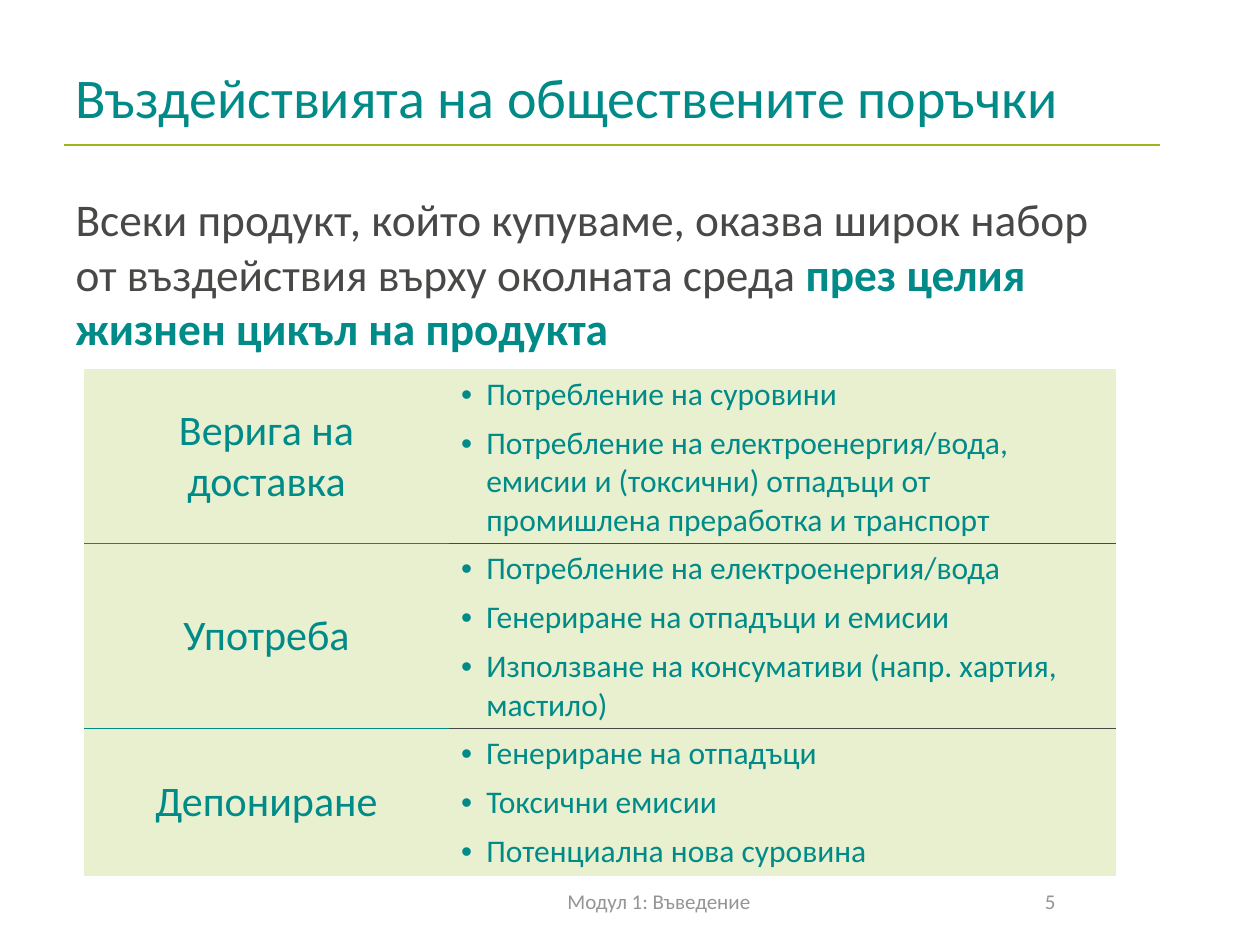
from dataclasses import dataclass

import pptx
import pptx.dml.color
import pptx.enum.shapes
import pptx.enum.text
import pptx.oxml
import pptx.oxml.ns
import pptx.util
from pptx.util import Inches, Pt

ALIGN = pptx.enum.text.PP_ALIGN
ANCHOR = pptx.enum.text.MSO_ANCHOR


@dataclass(frozen=True)
class Theme:
    font: str = "Calibri"
    teal: str = "008A88"
    dark: str = "484847"
    gray: str = "959595"
    rule: str = "9BB51B"
    cell: str = "E8F0D0"
    title_size: float = 32
    body_size: float = 25.9
    stage_size: float = 24
    impact_size: float = 18
    footer_size: float = 12


THEME = Theme()

TITLE = "Въздействията на обществените поръчки"
INTRO = "Всеки продукт, който купуваме, оказва широк набор от въздействия върху околната среда "
INTRO_EMPHASIS = "през целия жизнен цикъл на продукта"
STAGES = [
    ("Верига на доставка", 1.31, [
        "Потребление на суровини",
        "Потребление на електроенергия/вода, емисии и (токсични) отпадъци от "
        "промишлена преработка и транспорт",
    ]),
    ("Употреба", 1.39, [
        "Потребление на електроенергия/вода",
        "Генериране на отпадъци и емисии",
        "Използване на консумативи (напр. хартия, мастило)",
    ]),
    ("Депониране", 1.11, [
        "Генериране на отпадъци",
        "Токсични емисии",
        "Потенциална нова суровина",
    ]),
]
COLUMNS = [(2.89, THEME.teal), (5.3, THEME.dark)]  # width, colour of the row rule
FOOTERS = [("Модул 1: Въведение", 2.87, 4.72), ("5", 7.17, 2.33)]

NO_GRID_STYLE = "{2D5ABB26-0587-4C30-8999-92F81FD0307C}"


def rgb(color):
    return pptx.dml.color.RGBColor.from_string(color)


def parse_element(xml):
    return pptx.oxml.parse_xml(xml.replace(">", f' {pptx.oxml.ns.nsdecls("a")}>', 1))


def format_runs(paragraph, size, color):
    for run in paragraph.runs:
        run.font.name = THEME.font
        run.font.size = Pt(size)
        run.font.color.rgb = rgb(color)


def place(shape, left, top, width, height):
    shape.left, shape.top = Inches(left), Inches(top)
    shape.width, shape.height = Inches(width), Inches(height)


def set_bullet(paragraph, indent, bullet):
    """Hang the text behind the bullet, or drop the bullet when it is None."""
    properties = paragraph._p.get_or_add_pPr()
    properties.set("marL", str(Inches(indent)))
    properties.set("indent", str(-Inches(indent)))
    if bullet:
        properties.append(parse_element('<a:buFont typeface="Arial"></a:buFont>'))
        properties.append(parse_element(f'<a:buChar char="{bullet}"></a:buChar>'))
    else:
        properties.append(parse_element("<a:buNone></a:buNone>"))


def set_bottom_border(cell, color):
    cell._tc.get_or_add_tcPr().insert(0, parse_element(
        f'<a:lnB w="{Pt(1)}"><a:solidFill><a:srgbClr val="{color}"/></a:solidFill></a:lnB>'))


def add_heading(slide):
    rule = slide.shapes.add_connector(
        pptx.enum.shapes.MSO_CONNECTOR.STRAIGHT,
        Inches(0.51), Inches(1.15), Inches(9.21), Inches(1.15))
    rule.line.color.rgb = rgb(THEME.rule)
    rule.line.width = Pt(0.75)
    rule._element.spPr.append(parse_element("<a:effectLst></a:effectLst>"))

    title = slide.shapes.title
    place(title, 0.5, 0.3, 8.75, 0.93)
    frame = title.text_frame
    frame.text = TITLE
    frame.auto_size = pptx.enum.text.MSO_AUTO_SIZE.NONE
    frame.vertical_anchor = ANCHOR.MIDDLE
    frame.paragraphs[0].alignment = ALIGN.LEFT
    format_runs(frame.paragraphs[0], THEME.title_size, THEME.teal)


def add_intro(slide):
    body = slide.placeholders[1]
    place(body, 0.5, 1.47, 8.52, 1.26)
    frame = body.text_frame
    frame.text = INTRO
    frame.auto_size = pptx.enum.text.MSO_AUTO_SIZE.NONE
    paragraph = frame.paragraphs[0]
    set_bullet(paragraph, 0, None)
    paragraph.space_before = Pt(0)
    emphasis = paragraph.add_run()
    emphasis.text = INTRO_EMPHASIS
    format_runs(paragraph, THEME.body_size, THEME.dark)
    emphasis.font.bold = True
    emphasis.font.color.rgb = rgb(THEME.teal)


def fill_stage(cell, stage):
    cell.text_frame.text = stage
    paragraph = cell.text_frame.paragraphs[0]
    paragraph.alignment = ALIGN.CENTER
    format_runs(paragraph, THEME.stage_size, THEME.teal)


def fill_impacts(cell, impacts):
    cell.text_frame.text = "\n".join(impacts)
    for index, paragraph in enumerate(cell.text_frame.paragraphs):
        set_bullet(paragraph, 0.2, "•")
        paragraph.space_before = Pt(3 if index else 0)
        paragraph.space_after = Pt(3)
        format_runs(paragraph, THEME.impact_size, THEME.teal)


def add_life_cycle_table(slide):
    width = sum(column_width for column_width, _ in COLUMNS)
    height = sum(row_height for _, row_height, _ in STAGES)
    table = slide.shapes.add_table(
        len(STAGES), len(COLUMNS), Inches(0.67), Inches(2.93),
        Inches(width), Inches(height)).table
    table.first_row = table.horz_banding = False
    table._tbl.tblPr.find(pptx.oxml.ns.qn("a:tableStyleId")).text = NO_GRID_STYLE
    for column, (column_width, _) in zip(table.columns, COLUMNS):
        column.width = Inches(column_width)
    for index, (stage, row_height, impacts) in enumerate(STAGES):
        row = table.rows[index]
        row.height = Inches(row_height)
        fill_stage(row.cells[0], stage)
        fill_impacts(row.cells[1], impacts)
        for cell, (_, rule_color) in zip(row.cells, COLUMNS):
            cell.vertical_anchor = ANCHOR.MIDDLE
            cell.fill.solid()
            cell.fill.fore_color.rgb = rgb(THEME.cell)
            if index < len(STAGES) - 1:
                set_bottom_border(cell, rule_color)


def add_footers(slide):
    for text, left, width in FOOTERS:
        box = slide.shapes.add_textbox(Inches(left), Inches(6.95), Inches(width), Inches(0.4))
        frame = box.text_frame
        frame.text = text
        frame.word_wrap = True
        frame.vertical_anchor = ANCHOR.MIDDLE
        frame.paragraphs[0].alignment = ALIGN.CENTER
        format_runs(frame.paragraphs[0], THEME.footer_size, THEME.gray)


def main():
    presentation = pptx.Presentation()
    presentation.slide_width, presentation.slide_height = Inches(10), Inches(7.5)
    slide = presentation.slides.add_slide(presentation.slide_layouts[1])
    add_heading(slide)
    add_intro(slide)
    add_footers(slide)
    add_life_cycle_table(slide)
    presentation.save("out.pptx")


if __name__ == "__main__":
    main()
